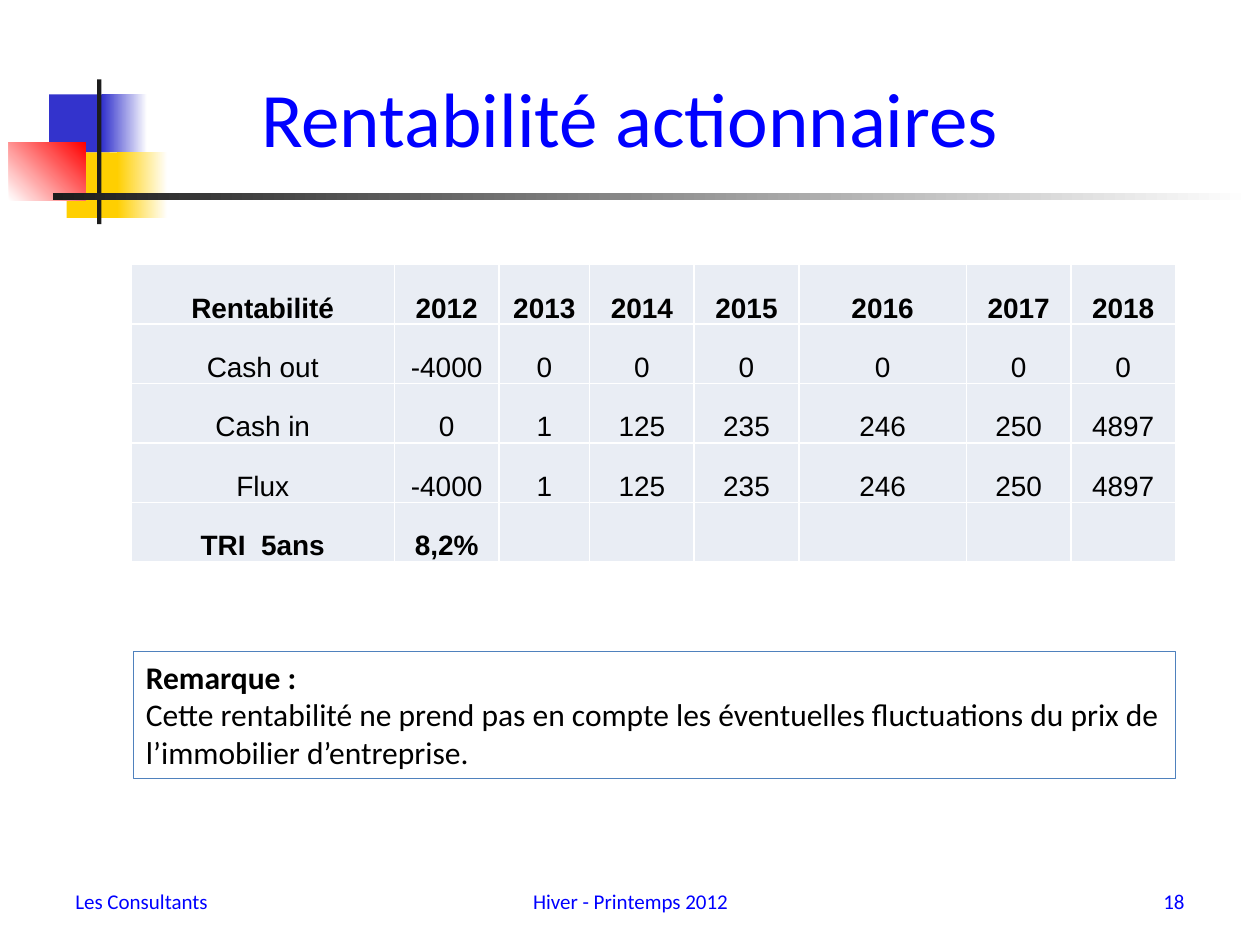
from dataclasses import dataclass

from lxml import etree
from pptx import Presentation
from pptx.dml.color import RGBColor
from pptx.enum.shapes import MSO_SHAPE
from pptx.enum.text import MSO_ANCHOR, MSO_AUTO_SIZE, PP_ALIGN
from pptx.oxml.ns import qn
from pptx.util import Inches, Pt

RECT = MSO_SHAPE.RECTANGLE
LEFT, CENTER, RIGHT = PP_ALIGN.LEFT, PP_ALIGN.CENTER, PP_ALIGN.RIGHT
TOP, MIDDLE, BOTTOM = MSO_ANCHOR.TOP, MSO_ANCHOR.MIDDLE, MSO_ANCHOR.BOTTOM
GRID_COLS, GRID_ROWS = 100, 75


@dataclass(frozen=True)
class Theme:
    heading: str = "0000FF"
    ink: str = "000000"
    white: str = "FFFFFF"
    blue: str = "3333CC"
    yellow: str = "FFCF01"
    red: str = "FF0000"
    dark: str = "1C1C1C"
    cell: str = "E9EDF4"
    frame: str = "4F81BD"
    text_font: str = "Calibri"
    table_font: str = "Arial"
    title_size: int = 44
    body_size: int = 18
    table_size: int = 16
    footer_size: int = 12


class SlideBuilder:
    """Draws on one slide; boxes are (column, row, columns, rows) of the grid."""

    def __init__(self, prs, theme):
        self.theme = theme
        self.col = prs.slide_width / GRID_COLS
        self.row = prs.slide_height / GRID_ROWS
        self.s = prs.slides.add_slide(prs.slide_layouts[6])

    def place(self, box):
        x, y, w, h = box
        return (round(x * self.col), round(y * self.row),
                round(w * self.col), round(h * self.row))

    def style(self, p, size, color, font, align=LEFT, bold=False):
        p.alignment = align
        for r in p.runs:
            r.font.size = Pt(size)
            r.font.name = font
            r.font.bold = bold
            r.font.color.rgb = RGBColor.from_string(color)

    def block(self, box, color, end=None, angle=0):
        """Borderless rectangle, fading from color to end when end is given."""
        sp = self.s.shapes.add_shape(RECT, *self.place(box))
        sp.shadow.inherit = False
        sp.line.fill.background()
        if end is None:
            sp.fill.solid()
            sp.fill.fore_color.rgb = RGBColor.from_string(color)
            return
        sp.fill.gradient()
        sp.fill.gradient_angle = angle
        for stop, value in zip(sp.fill.gradient_stops, (color, end)):
            stop.color.rgb = RGBColor.from_string(value)

    def label(self, box, text, size, align):
        tf = self.s.shapes.add_textbox(*self.place(box)).text_frame
        tf.word_wrap = True
        tf.vertical_anchor = MIDDLE
        tf.text = text
        self.style(tf.paragraphs[0], size, self.theme.heading,
                   self.theme.text_font, align)

    def remark(self, box, heading, body):
        t = self.theme
        sp = self.s.shapes.add_shape(RECT, *self.place(box))
        sp.shadow.inherit = False
        sp.fill.background()
        sp.line.color.rgb = RGBColor.from_string(t.frame)
        sp.line.width = Pt(0.75)
        tf = sp.text_frame
        tf.word_wrap = True
        tf.auto_size = MSO_AUTO_SIZE.SHAPE_TO_FIT_TEXT
        tf.vertical_anchor = TOP
        tf.text = f"{heading}\n{body}"
        for p, bold in zip(tf.paragraphs, (True, False)):
            self.style(p, t.body_size, t.ink, t.text_font, bold=bold)

    def borders(self, cell):
        tc_pr = cell._tc.get_or_add_tcPr()
        for side in ("a:lnL", "a:lnR", "a:lnT", "a:lnB"):
            ln = etree.SubElement(tc_pr, qn(side), w=str(Pt(1)))
            fill = etree.SubElement(ln, qn("a:solidFill"))
            etree.SubElement(fill, qn("a:srgbClr"), val=self.theme.white)

    def table(self, origin, widths, row_height, rows, bold_rows):
        t = self.theme
        box = (*origin, sum(widths), row_height * len(rows))
        table = self.s.shapes.add_table(
            len(rows), len(widths), *self.place(box)).table
        for column, width in zip(table.columns, widths):
            column.width = round(width * self.col)
        for i, values in enumerate(rows):
            for j in range(len(widths)):
                cell = table.cell(i, j)
                cell.margin_left = cell.margin_right = 0
                cell.margin_top = cell.margin_bottom = 0
                cell.vertical_anchor = BOTTOM
                self.borders(cell)
                cell.fill.solid()
                cell.fill.fore_color.rgb = RGBColor.from_string(t.cell)
                if j < len(values):
                    cell.text = values[j]
                    self.style(cell.text_frame.paragraphs[0], t.table_size,
                               t.ink, t.table_font, CENTER, i in bold_rows)


def main():
    prs = Presentation()
    prs.slide_width, prs.slide_height = Inches(10), Inches(7.5)
    t = Theme()
    b = SlideBuilder(prs, t)

    b.block((3.9, 7.5, 4.8, 4.6), t.blue)
    b.block((8.1, 7.5, 3.6, 4.6), t.blue, t.white)
    b.block((5.3, 12.1, 4.6, 5.2), t.yellow)
    b.block((9.3, 12.1, 4, 5.2), t.yellow, t.white)
    b.block((0.7, 11.3, 6.1, 4.6), t.white, t.red, angle=45)
    b.block((7.7, 6.3, 0.35, 11.5), t.dark)
    b.block((4.2, 15.3, 95.1, 0.6), t.dark, t.white)

    b.label((5, 3, 90, 12.5), "Rentabilité actionnaires", t.title_size, CENTER)

    years = [str(year) for year in range(2012, 2019)]
    inflows = ["1", "125", "235", "246", "250", "4897"]
    rows = [
        ["Rentabilité", *years],
        ["Cash out", "-4000", *["0"] * len(inflows)],
        ["Cash in", "0", *inflows],
        ["Flux", "-4000", *inflows],
        ["TRI  5ans", "8,2%"],
    ]
    widths = [20.9, 8.3, 7.2, 8.3, 8.3, 13.3, 8.3, 8.3]
    b.table((10.4, 21), widths, 4.72, rows, bold_rows=(0, len(rows) - 1))

    b.remark((10.6, 51.7, 82.7, 10.1), "Remarque :",
             "Cette rentabilité ne prend pas en compte les éventuelles "
             "fluctuations du prix de l’immobilier d’entreprise.")

    footers = [
        (5, 23.3, "Les Consultants", LEFT),
        (34.2, 31.7, "Hiver - Printemps 2012", CENTER),
        (71.7, 23.3, "18", RIGHT),
    ]
    for x, width, text, align in footers:
        b.label((x, 69.5, width, 4), text, t.footer_size, align)

    prs.save("out.pptx")


if __name__ == "__main__":
    main()
